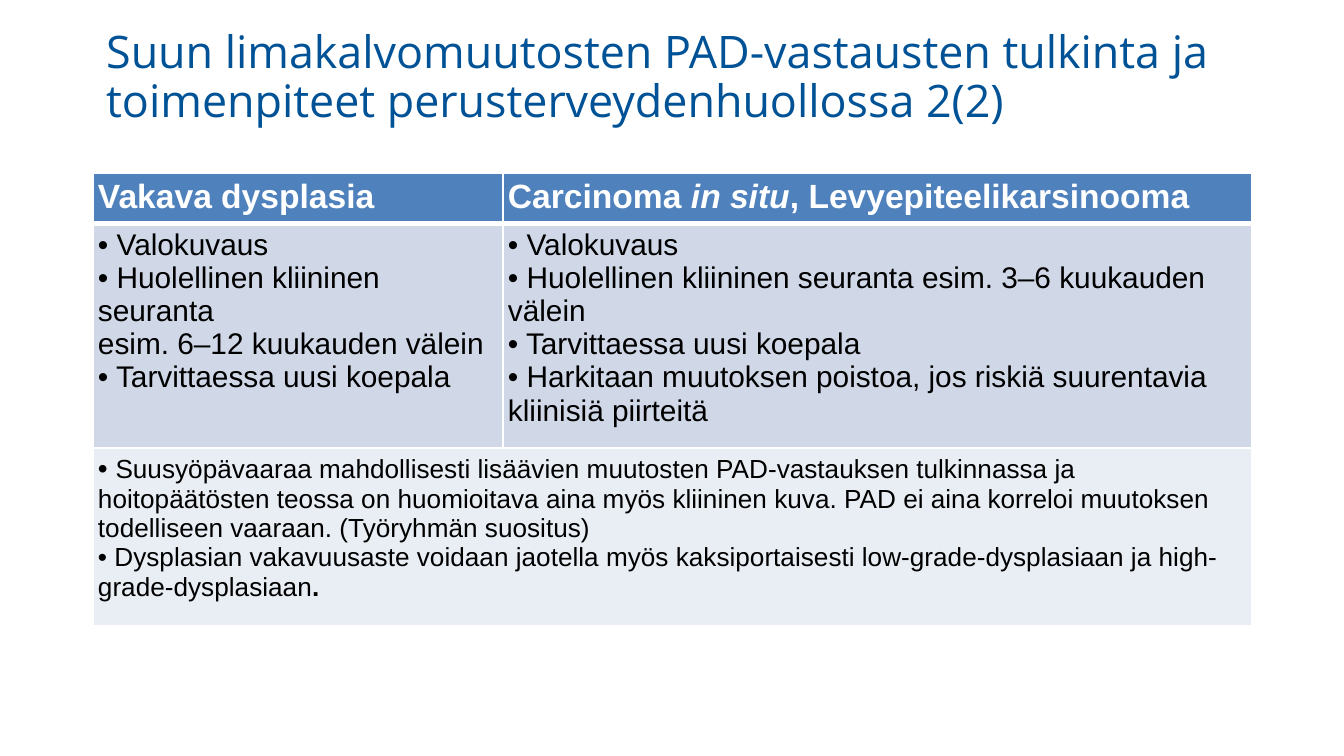
from dataclasses import dataclass

from lxml.etree import SubElement
from pptx import Presentation
from pptx.dml.color import RGBColor as Rgb
from pptx.enum.text import MSO_ANCHOR as Anchor
from pptx.oxml.ns import qn
from pptx.util import Emu, Pt

EMU_PER_PX = 914400 / 134.4


@dataclass(frozen=True)
class Theme:
    title_font: str = "Open Sans"
    body_font: str = "Arial"
    title_color: str = "005296"
    header_text: str = "FFFFFF"
    body_text: str = "000000"
    border: str = "FFFFFF"
    header_fill: str = "4F81BD"
    body_fill: str = "D0D8E8"
    note_fill: str = "E9EDF4"
    title_size: int = 24
    header_size: int = 18
    body_size: int = 16
    note_lead_size: int = 15
    note_size: int = 14


THEME = Theme()

TITLE = ("Suun limakalvomuutosten PAD-vastausten tulkinta ja "
         "toimenpiteet perusterveydenhuollossa 2(2)")

# Each cell is a list of paragraphs, each paragraph a list of (text, style) runs
HEADERS = [
    [[("Vakava dysplasia", {})]],
    [[("Carcinoma ", {}), ("in situ", {"italic": True}),
      (", Levyepiteelikarsinooma", {})]],
]
ACTIONS = [
    [[(" Valokuvaus", {})],
     [(" Huolellinen kliininen seuranta \nesim. 6–12 kuukauden välein", {})],
     [(" Tarvittaessa uusi koepala", {})]],
    [[(" Valokuvaus", {})],
     [(" Huolellinen kliininen seuranta esim. 3–6 kuukauden välein", {})],
     [(" Tarvittaessa uusi koepala", {})],
     [(" Harkitaan muutoksen poistoa, jos riskiä suurentavia "
       "kliinisiä piirteitä", {})]],
]
NOTES = [
    [(" ", {"size": THEME.note_lead_size}),
     ("Suusyöpävaaraa mahdollisesti lisäävien muutosten PAD-vastauksen "
      "tulkinnassa ja hoitopäätösten teossa on huomioitava aina myös kliininen "
      "kuva. PAD ei aina korreloi muutoksen todelliseen vaaraan. "
      "(Työryhmän suositus)", {})],
    [(" Dysplasian vakavuusaste voidaan jaotella myös kaksiportaisesti "
      "low-grade-dysplasiaan ja high-grade-dysplasiaan", {}),
     (".", {"bold": True})],
]


def px(value):
    return Emu(round(value * EMU_PER_PX))


def add_run(para, text, font, size, color, bold=False, italic=False):
    """Add text run by run, with a line break at each newline."""
    for index, line in enumerate(text.split("\n")):
        if index:
            para.add_line_break()
        span = para.add_run()
        span.text = line
        span.font.name = font
        span.font.size = Pt(size)
        span.font.bold = bold
        span.font.italic = italic
        span.font.color.rgb = Rgb.from_string(color)


def add_bullet(para):
    properties = para._p.get_or_add_pPr()
    properties.set("marL", "0")
    properties.set("indent", "0")
    SubElement(properties, qn("a:buFont"), typeface=THEME.body_font)
    SubElement(properties, qn("a:buChar"), char="•")


def set_borders(cell, top=1, bottom=1):
    properties = cell._tc.get_or_add_tcPr()
    for side, width in (("L", 1), ("R", 1), ("T", top), ("B", bottom)):
        line = SubElement(properties, qn(f"a:ln{side}"), w=str(Pt(width)))
        fill = SubElement(line, qn("a:solidFill"))
        SubElement(fill, qn("a:srgbClr"), val=THEME.border)


def fill_cell(cell, paragraphs, fill, color, size,
              bold=False, bullets=True, top=1, bottom=1):
    set_borders(cell, top, bottom)
    cell.fill.solid()
    cell.fill.fore_color.rgb = Rgb.from_string(fill)
    cell.margin_left = cell.margin_right = px(5)
    cell.margin_top = cell.margin_bottom = px(5)
    frame = cell.text_frame
    for index, runs in enumerate(paragraphs):
        para = frame.add_paragraph() if index else frame.paragraphs[0]
        if bullets:
            add_bullet(para)
        for text, style in runs:
            look = {"size": size, "bold": bold, **style}
            add_run(para, text, THEME.body_font, color=color, **look)


def add_title(page):
    box = page.shapes.add_textbox(px(93), px(17), px(1159), px(123))
    frame = box.text_frame
    frame.word_wrap = True
    frame.vertical_anchor = Anchor.MIDDLE
    para = frame.paragraphs[0]
    para.line_spacing = 0.9
    add_run(para, TITLE, THEME.title_font, THEME.title_size, THEME.title_color)


def add_findings_table(page):
    widths, heights = (410, 749), (50, 181, 178)
    frame = page.shapes.add_table(len(heights), len(widths), px(93), px(173),
                                  px(sum(widths)), px(sum(heights)))
    table = frame.table
    for column, width in zip(table.columns, widths):
        column.width = px(width)
    for row, height in zip(table.rows, heights):
        row.height = px(height)

    # Header and action rows
    for index, (header, actions) in enumerate(zip(HEADERS, ACTIONS)):
        fill_cell(table.cell(0, index), header, THEME.header_fill,
                  THEME.header_text, THEME.header_size,
                  bold=True, bullets=False, bottom=3)
        fill_cell(table.cell(1, index), actions, THEME.body_fill,
                  THEME.body_text, THEME.body_size, top=3)

    # Notes across both columns
    notes = table.cell(2, 0)
    notes.merge(table.cell(2, 1))
    fill_cell(notes, NOTES, THEME.note_fill, THEME.body_text, THEME.note_size)


def main():
    deck = Presentation()
    deck.slide_width, deck.slide_height = px(1344), px(756)
    page = deck.slides.add_slide(deck.slide_layouts[6])
    add_title(page)
    add_findings_table(page)
    deck.save("out.pptx")


if __name__ == "__main__":
    main()
